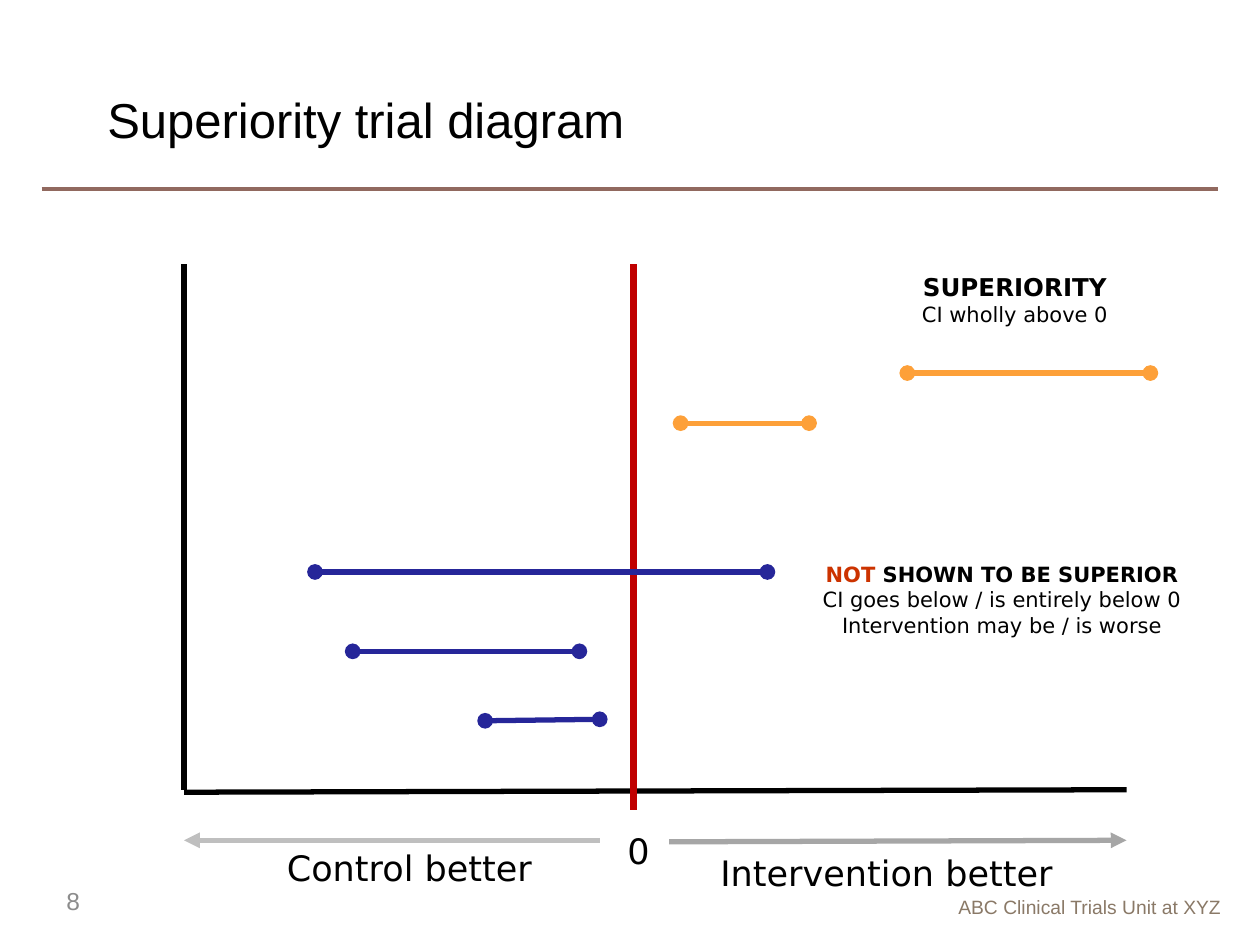
from lxml.etree import SubElement
from pptx import Presentation
from pptx.dml.color import RGBColor
from pptx.enum.shapes import MSO_CONNECTOR
from pptx.enum.text import MSO_ANCHOR, PP_ALIGN
from pptx.oxml.ns import qn
from pptx.util import Cm, Pt

COLORS = {
    "black": "000000", "rule": "91695F", "footer": "8A7967", "number": "8C8C8C",
    "zero": "C00000", "control": "BFBFBF", "intervention": "A6A6A6",
    "superior": "FDA039", "not_superior": "262699", "not": "CC3300",
}
PLAIN, LABEL = "Arial", "DejaVu Sans"


def add_line(slide, start, end, color, width, head=None, tail=None):
    line = slide.shapes.add_connector(
        MSO_CONNECTOR.STRAIGHT, *(Cm(value) for value in (*start, *end)))
    line.line.color.rgb = RGBColor.from_string(COLORS[color])
    line.line.width = Pt(width)
    outline = line.line._get_or_add_ln()
    for tag, ending in (("a:headEnd", head), ("a:tailEnd", tail)):
        if ending:
            SubElement(outline, qn(tag), type=ending)
    SubElement(line._element.spPr, qn("a:effectLst"))


def add_run(paragraph, text, size, color="black", font=LABEL, bold=False):
    run = paragraph.add_run()
    run.text = text
    run.font.size = Pt(size)
    run.font.name = font
    run.font.bold = bold
    run.font.color.rgb = RGBColor.from_string(COLORS[color])


def add_text(slide, box, paragraphs, align=PP_ALIGN.CENTER, anchor=MSO_ANCHOR.TOP):
    """Each paragraph is a list of runs, each run the arguments of add_run."""
    frame = slide.shapes.add_textbox(*(Cm(value) for value in box)).text_frame
    frame.word_wrap = True
    frame.vertical_anchor = anchor
    for index, runs in enumerate(paragraphs):
        paragraph = frame.paragraphs[0] if index == 0 else frame.add_paragraph()
        paragraph.alignment = align
        for run in runs:
            add_run(paragraph, *run)


def add_header(slide, left, top, width, height):
    title = slide.shapes.title
    title.left, title.top = Cm(left + 1.07), Cm(top)
    title.width, title.height = Cm(width - 1.98), Cm(2.26)
    title.text_frame.vertical_anchor = MSO_ANCHOR.MIDDLE
    heading = title.text_frame.paragraphs[0]
    heading.alignment = PP_ALIGN.LEFT
    add_run(heading, "Superiority trial diagram", 28, font=PLAIN)
    rule_y = top + height
    add_line(slide, (left, rule_y), (left + width, rule_y), "rule", 1.75)


def add_footer(slide, left, top, width, height):
    add_text(slide, (left, top, 5.72, height), [[("8", 14, "number", PLAIN)]],
             PP_ALIGN.LEFT, MSO_ANCHOR.MIDDLE)
    unit_width = 8.46
    add_text(slide, (left + width - unit_width, top + 0.28, unit_width, 0.74),
             [[("ABC Clinical Trials Unit at XYZ", 11, "footer", PLAIN)]],
             PP_ALIGN.RIGHT)


def add_diagram(slide, left, top, width, height):
    def at(x, y):
        return left + x, top + y

    # Axes and the line of no difference
    axis_end = height - 0.05
    zero_x = 9.07
    add_line(slide, at(0, 0), at(0, axis_end), "black", 3)
    add_line(slide, at(0, height), at(width, axis_end), "black", 3)
    add_line(slide, at(zero_x, 0), at(zero_x, 11), "zero", 4)

    # Direction arrows and their labels
    arrow_y = 11.61
    add_line(slide, at(8.38, arrow_y), at(0, arrow_y), "control", 3, tail="triangle")
    add_line(slide, at(9.78, 11.64), at(width, arrow_y), "intervention", 3,
             tail="triangle")
    for text, x, y, label_width in (
            ("0", 8.69, 11.26, 0.79),
            ("Control better", 1.75, 11.61, 5.59),
            ("Intervention better", 9.57, 11.71, 9.19)):
        add_text(slide, (*at(x, y), label_width, 1.12), [[(text, 20)]])

    # Confidence intervals
    for start, end, color in (
            ((14.58, 2.19), (19.48, 2.19), "superior"),
            ((10.01, 3.2), (12.6, 3.2), "superior"),
            ((2.64, 6.2), (11.76, 6.2), "not_superior"),
            ((3.4, 7.8), (7.97, 7.8), "not_superior"),
            ((6.07, 9.2), (8.38, 9.17), "not_superior")):
        add_line(slide, at(*start), at(*end), color, 3, "oval", "oval")

    # Conclusions
    note_width = 8.76
    add_text(slide, (*at(12.37, 0.03), note_width, 1.37), [
        [("SUPERIORITY", 14, "black", LABEL, True)],
        [("CI wholly above 0", 12)],
    ])
    add_text(slide, (*at(12.11, 5.87), note_width, 1.8), [
        [("NOT ", 12, "not", LABEL, True),
         ("SHOWN TO BE SUPERIOR", 12, "black", LABEL, True)],
        [("CI goes below / is entirely below 0", 12)],
        [("Intervention may be / is worse", 12)],
    ])


def main():
    deck = Presentation()
    deck.slide_width, deck.slide_height = Cm(25.4), Cm(19.05)
    slide = deck.slides.add_slide(deck.slide_layouts[5])
    add_header(slide, 0.84, 1.27, 23.72, 2.54)
    add_footer(slide, 1.09, 17.65, 23.78, 1.02)
    add_diagram(slide, 3.71, 5.33, 19, 10.64)
    deck.save("out.pptx")


if __name__ == "__main__":
    main()
